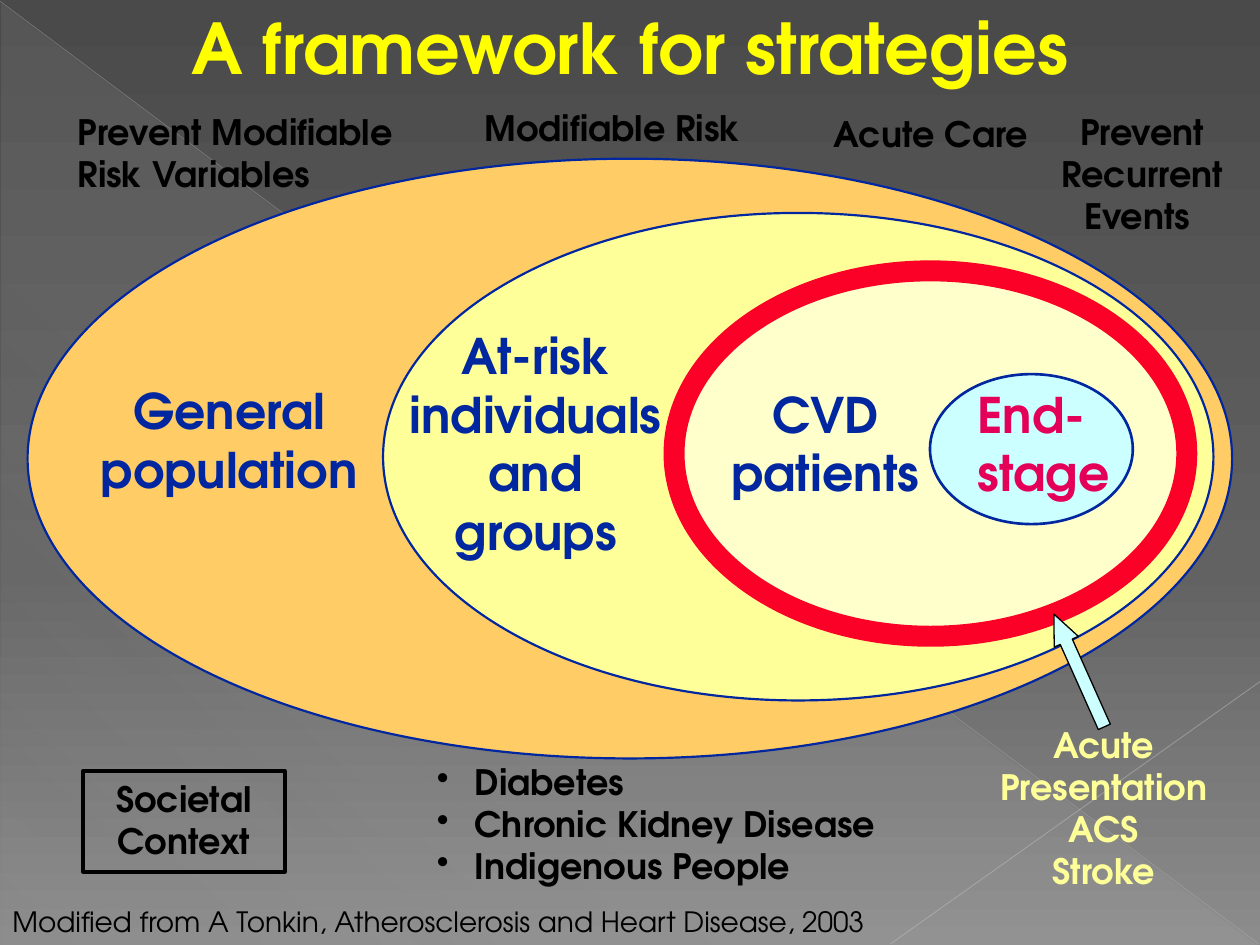
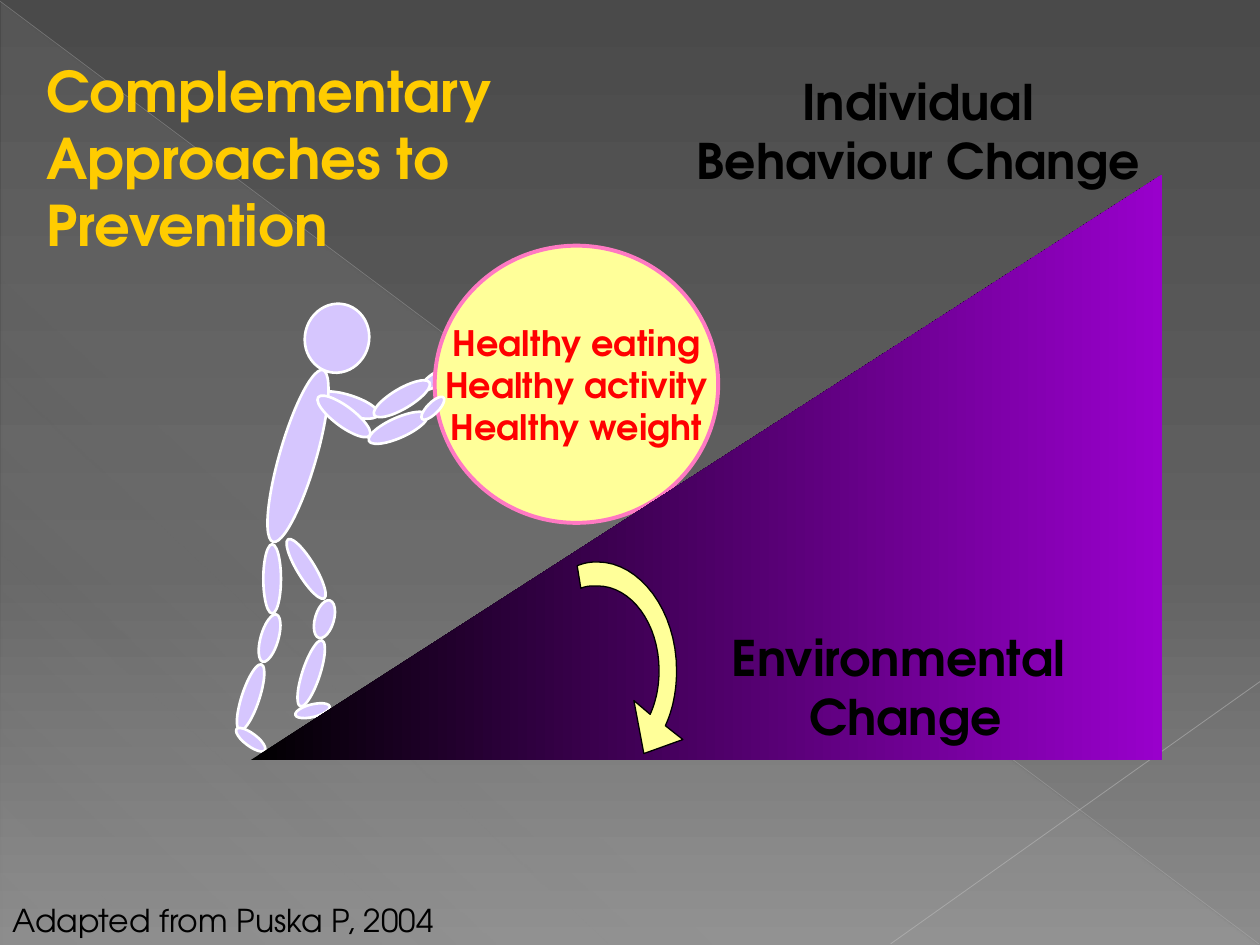
"""Build two slides on strategies for preventing cardiovascular disease."""
from lxml.etree import SubElement
from pptx import Presentation
from pptx.dml.color import RGBColor
from pptx.enum.shapes import MSO_CONNECTOR, MSO_SHAPE
from pptx.enum.text import MSO_ANCHOR, PP_ALIGN
from pptx.oxml.ns import qn
from pptx.util import Pt

COLORS = {
    "black": "000000", "white": "FFFFFF", "navy": "00279F", "orange": "FFCC66",
    "yellow": "FFFF99", "cream": "FFFFCC", "red": "FC0128", "ice": "CCFFFF",
    "title": "FFFF00", "title_edge": "72002C", "gold": "FFCC00", "crimson": "E40059",
    "lilac": "D6C6FE", "pink": "FF79C2", "bright_red": "FF0000", "purple": "9900CC",
    "dark_grey": "4A4A4A", "mid_grey": "626262", "light_grey": "8C8C8C",
    "sheen": "D2D2D2", "long_ray": "BFBFBF", "short_ray": "C6C6C6",
}
FONT = "TeX Gyre Adventor"
REAR_LIMBS = [
    (245.5, 206.6, 7.2, 20.2, 236.5),
    (174.2, 173.5, 36.7, 39.6, 13.6),
    (193, 213.1, 11.5, 36.7, 287.6),
    (159.8, 209.5, 20.9, 102.2, 16.2),
    (150.5, 311, 10.1, 39.6, 0),
    (149, 350.6, 10.1, 28.1, 16.2),
    (138.2, 378.7, 10.1, 39.6, 18.2),
    (139.7, 412.6, 7.2, 20.2, 307),
    (169.9, 305.3, 10.1, 39.6, 328.6),
    (180, 342.7, 10.8, 22.3, 16.2),
    (172.8, 365, 10.1, 39.6, 18.2),
    (175, 396, 7.2, 20.2, 256.1),
    (223.9, 209.5, 11.5, 36.7, 239.5),
]
FRONT_ARM = [
    (190.8, 219.6, 11.5, 36.7, 306.6),
    (221.8, 226.1, 11.5, 36.7, 245.9),
    (244.1, 224.6, 6.5, 17.3, 224.9),
]
CURVED_ARROW = [
    (371.5, 408.2),
    (375.1, 400.3, 376.6, 391.7, 376.6, 383),
    (376.6, 356.4, 360.7, 334.8, 341.3, 334.8),
    (337.7, 334.8, 334.8, 334.8, 331.9, 336.2),
    (329.8, 323.3),
    (333.4, 321.8, 337, 321.1, 341.3, 321.1),
    (365.8, 321.1, 386.6, 349.2, 386.6, 383),
    (386.6, 394.6, 384.5, 405.4, 380.2, 414.7),
    (390.2, 422.6), (367.9, 430.6), (362.2, 400.3),
]


def rgb(color):
    return RGBColor.from_string(COLORS[color])


def set_gradient(fill, element, stops, angle):
    fill.gradient()
    gradient = element.find(".//" + qn("a:gradFill"))
    gradient.clear()
    gradient.set("rotWithShape", "1")
    stop_list = SubElement(gradient, qn("a:gsLst"))
    for position, color, opacity in stops:
        stop = SubElement(stop_list, qn("a:gs"), pos=str(position * 1000))
        tint = SubElement(stop, qn("a:srgbClr"), val=COLORS[color])
        if opacity < 100:
            SubElement(tint, qn("a:alpha"), val=str(opacity * 1000))
    SubElement(gradient, qn("a:lin"), ang=str(angle * 60000), scaled="0")


def flatten(outline, steps=16):
    points = [outline[0]]
    for segment in outline[1:]:
        if len(segment) == 2:
            points.append(segment)
            continue
        start, first, second, end = points[-1], segment[:2], segment[2:4], segment[4:]
        for step in range(1, steps + 1):
            t = step / steps
            u = 1 - t
            points.append(tuple(
                u**3 * a + 3 * u * u * t * b + 3 * u * t * t * c + t**3 * d
                for a, b, c, d in zip(start, first, second, end)))
    return [(Pt(x), Pt(y)) for x, y in points]


class SlidePainter:
    def __init__(self):
        self.deck = Presentation()
        self.deck.slide_width, self.deck.slide_height = Pt(720), Pt(540)
        master = self.deck.slide_master
        set_gradient(master.background.fill, master._element,
                     [(0, "dark_grey", 100), (60, "mid_grey", 100), (100, "light_grey", 100)], 90)
        self.page = None

    def new_page(self):
        self.page = self.deck.slides.add_slide(self.deck.slide_layouts[6])
        sheen = self.shape(MSO_SHAPE.RIGHT_TRIANGLE, (0.7, 1.4, 718.6, 538.6))
        set_gradient(sheen.fill, sheen._element,
                     [(0, "sheen", 10), (70, "sheen", 8), (100, "sheen", 1)], 133)
        self.ray((0, 0.7, 719.3, 539.3), "long_ray", 0.39, 35)
        self.ray((720, 389.5, 509, 539.3), "short_ray", 0.47, 45)

    def ray(self, ends, color, width, opacity):
        line = self.page.shapes.add_connector(MSO_CONNECTOR.STRAIGHT, *map(Pt, ends))
        line.line.color.rgb = rgb(color)
        line.line.width = Pt(width)
        tint = line._element.find(".//" + qn("a:srgbClr"))
        SubElement(tint, qn("a:alpha"), val=str(opacity * 1000))
        SubElement(line._element.spPr, qn("a:effectLst"))

    def finish(self, shape, fill, line, width):
        shape.shadow.inherit = False
        if fill:
            shape.fill.solid()
            shape.fill.fore_color.rgb = rgb(fill)
        else:
            shape.fill.background()
        if line:
            shape.line.color.rgb = rgb(line)
            shape.line.width = Pt(width)
        else:
            shape.line.fill.background()
        return shape

    def shape(self, kind, frame, fill=None, line=None, width=1.25, rotation=0):
        shape = self.page.shapes.add_shape(kind, *map(Pt, frame))
        shape.rotation = rotation
        return self.finish(shape, fill, line, width)

    def ellipse(self, frame, fill, line, width=1.25, rotation=0):
        return self.shape(MSO_SHAPE.OVAL, frame, fill, line, width, rotation)

    def limbs(self, limbs):
        for *frame, rotation in limbs:
            self.ellipse(frame, "lilac", "white", 1.5, rotation)

    def outline(self, points, fill, line, width):
        builder = self.page.shapes.build_freeform(*points[0], scale=1.0)
        builder.add_line_segments(points[1:], close=True)
        return self.finish(builder.convert_to_shape(), fill, line, width)

    def label(self, shape, lines, size, color="black", bold=True, align=PP_ALIGN.CENTER,
              anchor=MSO_ANCHOR.TOP, wrap=True, bullet=None, spacing=None):
        frame = shape.text_frame
        frame.word_wrap, frame.vertical_anchor = wrap, anchor
        for index, line in enumerate(lines):
            para = frame.add_paragraph() if index else frame.paragraphs[0]
            span = para.add_run()
            span.text = line
            for name, value in {"alignment": align, "line_spacing": spacing}.items():
                setattr(para, name, value)
            for name, value in {"name": FONT, "size": Pt(size), "bold": bold}.items():
                setattr(span.font, name, value)
            span.font.color.rgb = rgb(color)
            if bullet:
                properties = para._p.get_or_add_pPr()
                properties.set("marL", str(Pt(21.6)))
                properties.set("indent", str(-Pt(21.6)))
                SubElement(properties, qn("a:buChar"), char=bullet)
        return shape

    def text(self, frame, lines, size, **style):
        box = self.page.shapes.add_textbox(*map(Pt, frame))
        return self.label(box, lines, size, **style)

    def source(self, frame, line, size):
        self.text(frame, [line], size, bold=False, align=PP_ALIGN.LEFT)


def build_framework(painter):
    painter.new_page()
    left, middle = PP_ALIGN.LEFT, MSO_ANCHOR.MIDDLE
    painter.text((270, 57.6, 196.6, 31), ["Modifiable Risk"], 20, align=left)
    painter.text((242.6, 431.3, 324, 79.2),
                 ["Diabetes", "Chronic Kidney Disease", "Indigenous People"], 20,
                 align=left, bullet="•")
    painter.ellipse((15.8, 90.7, 688.3, 342.7), "orange", "navy")
    painter.ellipse((218.9, 121.7, 474.5, 278.6), "yellow", "navy")
    painter.ellipse((385.2, 154.8, 293, 208.8), "cream", "red", 12)
    for frame, group in [
        ((48.2, 213.8, 165.6, 74.2), "General population"),
        ((223.9, 182.2, 164.2, 141.8), "At-risk individuals and groups"),
        ((405.4, 216, 132.5, 74.2), "CVD patients"),
    ]:
        painter.text(frame, [group], 28, color="navy", anchor=middle)
    painter.ellipse((531.4, 213.8, 115.9, 85.7), "ice", "navy", 1.5)
    painter.text((541.4, 409.7, 178.6, 79.2), ["Acute Presentation", "ACS", "Stroke"], 20,
                 color="yellow")
    arrow = painter.shape(MSO_SHAPE.UP_ARROW, (609.1, 347.8, 15.1, 70.6),
                          "ice", "black", 0.75, 335.9)
    arrow.adjustments[1] = 1.15
    title = painter.text((0, 2.9, 720, 53.3), ["A framework for strategies"], 40,
                         color="title", anchor=middle, spacing=0.9)
    properties = title.text_frame.paragraphs[0].runs[0].font._element
    edge = SubElement(properties, qn("a:ln"), w=str(Pt(0.75)))
    SubElement(SubElement(edge, qn("a:solidFill")), qn("a:srgbClr"), val=COLORS["title_edge"])
    properties.insert(0, edge)
    context = painter.shape(MSO_SHAPE.RECTANGLE, (47.5, 440.6, 115.2, 57.6),
                            line="black", width=2.25)
    painter.label(context, ["Societal", "Context"], 20)
    painter.text((37.4, 59.8, 206, 55.4), ["Prevent Modifiable Risk Variables"], 20, align=left)
    painter.text((572.4, 59.8, 160.6, 79.2), ["Prevent Recurrent Events "], 20)
    painter.text((551.5, 216, 91.4, 74.2), ["End-stage"], 28, color="crimson", align=left)
    painter.text((469.4, 60.5, 126, 31), ["Acute Care"], 20, align=left)
    painter.source((0, 513.4, 538.6, 26.6),
                   "Modified from A Tonkin, Atherosclerosis and Heart Disease, 2003", 16)


def build_approaches(painter):
    painter.new_page()
    painter.text((365.8, 37.4, 317.5, 74.2), ["Individual", "Behaviour Change"], 28)
    painter.limbs(REAR_LIMBS)
    ball = painter.ellipse((248.4, 140.4, 162, 158.4), "yellow", "pink", 2.25)
    painter.label(ball, ["Healthy eating", "Healthy activity", "Healthy weight"], 20,
                  color="bright_red", anchor=MSO_ANCHOR.MIDDLE, wrap=False)
    painter.limbs(FRONT_ARM)
    slope = painter.shape(MSO_SHAPE.RIGHT_TRIANGLE, (236.2, 6.5, 334.8, 521.3), rotation=270)
    set_gradient(slope.fill, slope._element, [(0, "black", 100), (100, "purple", 100)], 90)
    painter.text((409, 355, 216.7, 74.2), ["Environmental ", "Change"], 28, wrap=False)
    painter.outline(flatten(CURVED_ARROW), "yellow", "black", 0.75)
    painter.source((0, 511.2, 347.8, 28.8), "Adapted from Puska P, 2004", 18)
    painter.text((19.4, 28.8, 312.5, 122.4), ["Complementary Approaches to Prevention"], 32,
                 color="gold", align=PP_ALIGN.LEFT)


def main():
    painter = SlidePainter()
    build_framework(painter)
    build_approaches(painter)
    painter.deck.save("out.pptx")


if __name__ == "__main__":
    main()
